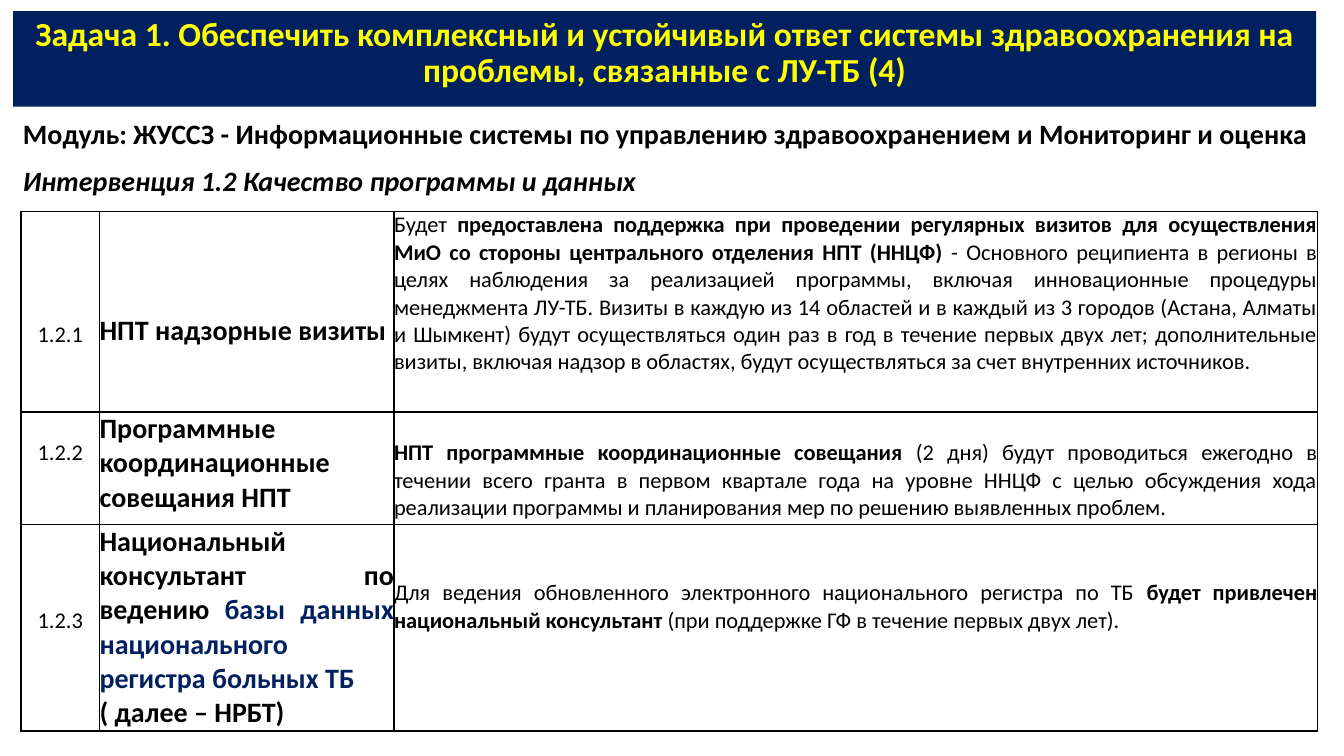
from dataclasses import dataclass

from lxml.etree import SubElement
from pptx import Presentation
from pptx.dml.color import RGBColor
from pptx.enum.shapes import MSO_SHAPE
from pptx.enum.text import MSO_ANCHOR, PP_ALIGN
from pptx.oxml.ns import qn
from pptx.util import Cm, Pt


@dataclass(frozen=True)
class Theme:
    font: str = "Calibri"
    navy: str = "002060"
    yellow: str = "FFFF00"
    black: str = "000000"
    title_size: int = 24
    heading_size: int = 20
    text_size: int = 16


theme = Theme()


def add_text(paragraph, text, size=theme.text_size, color=theme.black, bold=False, italic=False):
    run = paragraph.add_run()
    run.text = text
    run.font.name = theme.font
    run.font.size = Pt(size)
    run.font.bold = bold
    run.font.italic = italic
    run.font.color.rgb = RGBColor.from_string(color)


def add_borders(cell):
    properties = cell._tc.get_or_add_tcPr()
    for position, side in enumerate(("a:lnL", "a:lnR", "a:lnT", "a:lnB")):
        line = properties.makeelement(qn(side), {"w": str(Pt(1))})
        fill = SubElement(line, qn("a:solidFill"))
        SubElement(fill, qn("a:srgbClr"), {"val": theme.black})
        properties.insert(position, line)


presentation = Presentation()
presentation.slide_width = Cm(33.87)
presentation.slide_height = Cm(19.05)
slide = presentation.slides.add_slide(presentation.slide_layouts[6])

title = slide.shapes.add_shape(MSO_SHAPE.RECTANGLE, Cm(0.33), Cm(0.28), Cm(32.84), Cm(2.41))
title.shadow.inherit = False
title.fill.solid()
title.fill.fore_color.rgb = RGBColor.from_string(theme.navy)
title.line.fill.background()
title.text_frame.word_wrap = True
title.text_frame.vertical_anchor = MSO_ANCHOR.MIDDLE
title.text_frame.margin_bottom = Cm(0.4)
paragraph = title.text_frame.paragraphs[0]
paragraph.alignment = PP_ALIGN.CENTER
paragraph.line_spacing = 0.9
add_text(
    paragraph,
    "Задача 1. Обеспечить комплексный и устойчивый ответ системы здравоохранения на проблемы, связанные с ЛУ-ТБ (4)",
    size=theme.title_size, color=theme.yellow, bold=True,
)

headings = slide.shapes.add_textbox(Cm(0.33), Cm(2.69), Cm(33.25), Cm(2.6)).text_frame
headings.word_wrap = True
module, intervention = headings.paragraphs[0], headings.add_paragraph()
for paragraph in (module, intervention):
    paragraph.line_spacing = 1.15
    paragraph.space_before = paragraph.space_after = Pt(3)
add_text(
    module,
    "Модуль: ЖУССЗ - Информационные системы по управлению здравоохранением и Мониторинг и оценка",
    size=theme.heading_size, bold=True,
)
add_text(
    intervention, "Интервенция 1.2 Качество программы и данных",
    size=theme.heading_size, bold=True, italic=True,
)

name_format = {"size": theme.heading_size, "bold": True}
strong = {"bold": True}
activities = [
    [
        (2.75, [[("1.2.1", {})]]),
        (2.58, [[("НПТ надзорные визиты", name_format)]]),
        (0, [[
            ("Будет ", {}),
            ("предоставлена поддержка при проведении регулярных визитов для осуществления МиО со стороны центрального отделения НПТ (ННЦФ)", strong),
            (" - Основного реципиента в регионы в целях наблюдения за реализацией программы, включая инновационные процедуры менеджмента ЛУ-ТБ. Визиты в каждую из 14 областей и в каждый из 3 городов (Астана, Алматы и Шымкент) будут осуществляться один раз в год в течение первых двух лет; дополнительные визиты, включая надзор в областях, будут осуществляться за счет внутренних источников.", {}),
        ]]),
    ],
    [
        (0.69, [[("1.2.2", {})]]),
        (0, [[("Программные координационные совещания НПТ", name_format)]]),
        (0.69, [[
            ("НПТ программные координационные совещания ", strong),
            ("(2 дня) будут проводиться ежегодно в течении всего гранта в первом квартале года на уровне ННЦФ с целью обсуждения хода реализации программы и планирования мер по решению выявленных проблем.", {}),
        ]]),
    ],
    [
        (2.07, [[("1.2.3", {})]]),
        (0, [
            [
                ("Национальный консультант по ведению ", name_format),
                ("базы данных национального регистра больных ТБ", {**name_format, "color": theme.navy}),
            ],
            [("( далее – НРБТ)", name_format)],
        ]),
        (1.38, [[
            ("Для ведения обновленного электронного национального регистра по ТБ ", {}),
            ("будет привлечен национальный консультант ", strong),
            ("(при поддержке ГФ в течение первых двух лет).", {}),
        ]]),
    ],
]

column_widths = (1.98, 7.42, 23.27)
row_heights = (5.05, 2.84, 5.2)
table = slide.shapes.add_table(
    len(row_heights), len(column_widths),
    Cm(0.53), Cm(5.33), Cm(sum(column_widths)), Cm(sum(row_heights)),
).table
table.first_row = False
table.horz_banding = False
for column, width in zip(table.columns, column_widths):
    column.width = Cm(width)
for row, height, activity in zip(table.rows, row_heights, activities):
    row.height = Cm(height)
    for column_index, (top_margin, paragraphs) in enumerate(activity):
        cell = row.cells[column_index]
        cell.fill.background()
        cell.margin_left = cell.margin_right = cell.margin_bottom = 0
        cell.margin_top = Cm(top_margin)
        add_borders(cell)
        for paragraph_index, runs in enumerate(paragraphs):
            frame = cell.text_frame
            paragraph = frame.add_paragraph() if paragraph_index else frame.paragraphs[0]
            paragraph.alignment = PP_ALIGN.JUSTIFY if column_index else PP_ALIGN.CENTER
            for text, text_format in runs:
                add_text(paragraph, text, **text_format)

presentation.save("out.pptx")
